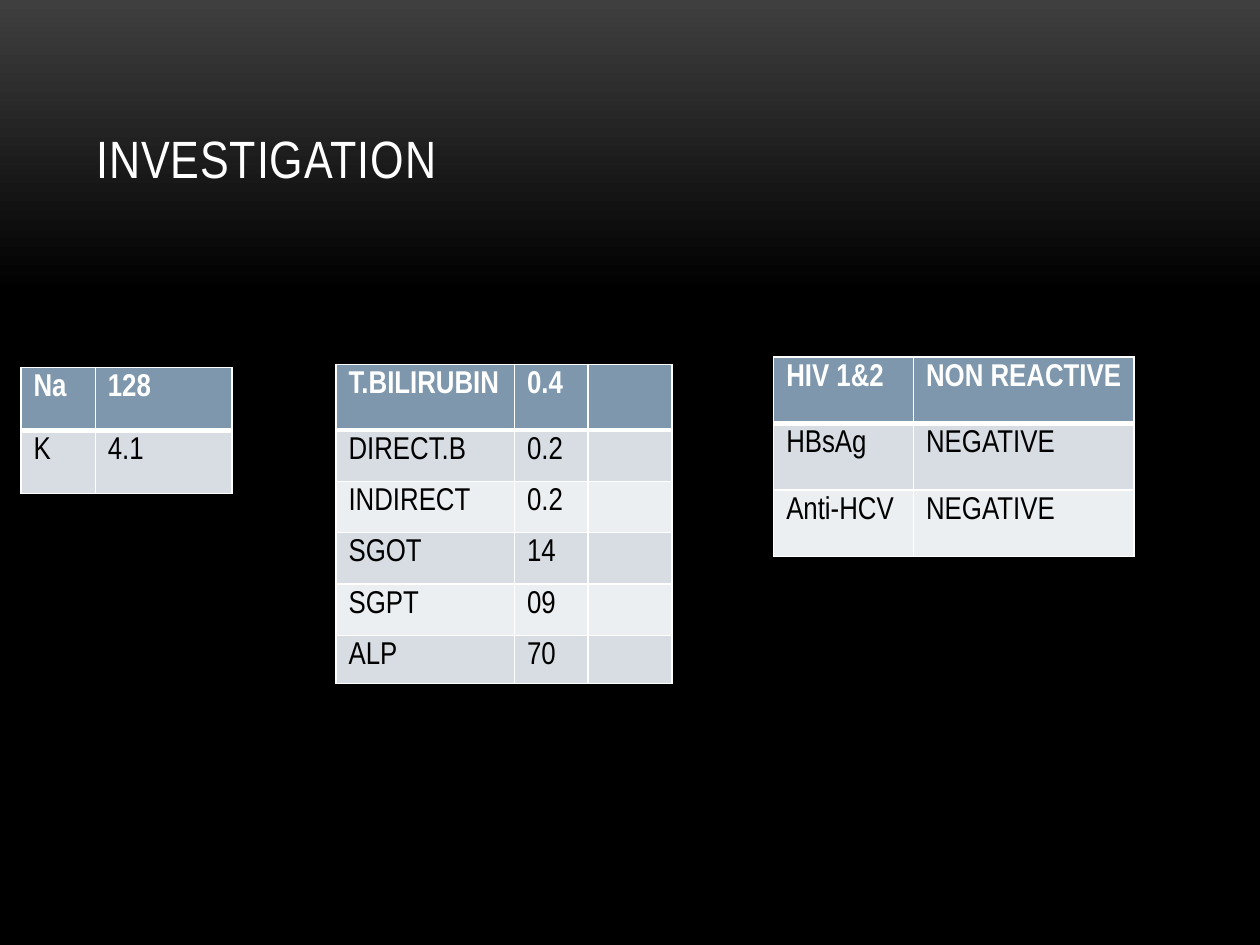
from copy import deepcopy
from dataclasses import dataclass

from lxml import etree
from pptx import Presentation
from pptx import util as u
from pptx.dml.color import RGBColor
from pptx.enum import text
from pptx.oxml.ns import qn


@dataclass(frozen=True)
class Theme:
    font: str = "Arial Narrow"
    light: str = "FFFFFF"
    dark: str = "000000"
    glow: str = "3F3F3F"
    header: str = "7E97AD"
    bands: tuple = ("D8DDE3", "ECEFF1")
    title_size: int = 30
    table_size: int = 18
    thin: int = 1
    thick: int = 3


class Deck:
    columns, rows = 60, 45

    def __init__(self, theme):
        self.theme = theme
        self.presentation = Presentation()
        self.presentation.slide_width = u.Inches(10)
        self.presentation.slide_height = u.Inches(7.5)
        self.slide = self.presentation.slides.add_slide(self.presentation.slide_layouts[5])

    def across(self, count):
        return round(self.presentation.slide_width * count / self.columns)

    def down(self, count):
        return round(self.presentation.slide_height * count / self.rows)

    def style(self, paragraph, size, color, bold=False):
        font = paragraph.font
        font.name, font.size, font.bold = self.theme.font, u.Pt(size), bold
        font.color.rgb = RGBColor.from_string(color)

    def background(self):
        fill = self.slide.background.fill
        fill.gradient()
        fill.gradient_angle = 270
        first, last = fill.gradient_stops
        first.color.rgb = RGBColor.from_string(self.theme.glow)
        last.color.rgb = RGBColor.from_string(self.theme.dark)
        last.position = 1
        element = list(self.slide.element.iter(qn("a:gs")))[-1]
        element.addprevious(deepcopy(element))
        fill.gradient_stops[1].position = 0.31

    def title(self, wording, left, top, width, height):
        shape = self.slide.shapes.title
        shape.left, shape.top = self.across(left), self.down(top)
        shape.width, shape.height = self.across(width), self.down(height)
        frame = shape.text_frame
        frame.text = wording
        frame.auto_size = text.MSO_AUTO_SIZE.NONE
        frame.vertical_anchor = text.MSO_ANCHOR.BOTTOM
        paragraph = frame.paragraphs[0]
        paragraph.alignment = text.PP_ALIGN.LEFT
        self.style(paragraph, self.theme.title_size, self.theme.light)
        paragraph.runs[0].font.bold = False
        paragraph.runs[0].font.element.set("spc", "50") if hasattr(
            paragraph.runs[0].font, "element"
        ) else paragraph.runs[0]._r.get_or_add_rPr().set("spc", "50")

    def borders(self, cell, top, bottom):
        properties = cell._tc.get_or_add_tcPr()
        widths = {"lnL": self.theme.thin, "lnR": self.theme.thin, "lnT": top, "lnB": bottom}
        for index, (tag, width) in enumerate(widths.items()):
            line = etree.Element(qn(f"a:{tag}"), w=str(u.Pt(width)))
            fill = etree.SubElement(line, qn("a:solidFill"))
            etree.SubElement(fill, qn("a:srgbClr"), val=self.theme.light)
            properties.insert(index, line)

    def table(self, left, top, widths, heights, values):
        theme = self.theme
        table = self.slide.shapes.add_table(
            len(heights), len(widths), self.across(left), self.down(top),
            self.across(sum(widths)), self.down(sum(heights)),
        ).table
        for column, width in zip(table.columns, widths):
            column.width = self.across(width)
        for index, (row, height, wordings) in enumerate(zip(table.rows, heights, values)):
            row.height = self.down(height)
            header = index == 0
            color = theme.header if header else theme.bands[(index - 1) % 2]
            for cell, wording in zip(row.cells, wordings):
                cell.text = wording
                cell.fill.solid()
                cell.fill.fore_color.rgb = RGBColor.from_string(color)
                self.style(cell.text_frame.paragraphs[0], theme.table_size,
                           theme.light if header else theme.dark, header)
                self.borders(cell, theme.thick if index == 1 else theme.thin,
                             theme.thick if header else theme.thin)

    def save(self):
        self.presentation.save("out.pptx")


def main():
    deck = Deck(Theme())
    deck.background()
    deck.table(1, 17.5, (3.54, 6.5), (3, 3), (("Na", "128"), ("K", "4.1")))
    liver = (("T.BILIRUBIN", "0.4", ""), ("DIRECT.B", "0.2", ""), ("INDIRECT", "0.2", ""),
             ("SGOT", "14", ""), ("SGPT", "09", ""), ("ALP", "70", ""))
    deck.table(16, 17.35, (8.5, 3.5, 4), (3.12, *[2.45] * 4, 2.28), liver)
    deck.title("INVESTIGATION", 4, 1.8, 52, 7.5)
    viral = (("HIV 1&2", "NON REACTIVE"), ("HBsAg", "NEGATIVE"), ("Anti-HCV", "NEGATIVE"))
    deck.table(36.84, 17, (6.66, 10.5), [3.17] * 3, viral)
    deck.save()


if __name__ == "__main__":
    main()
